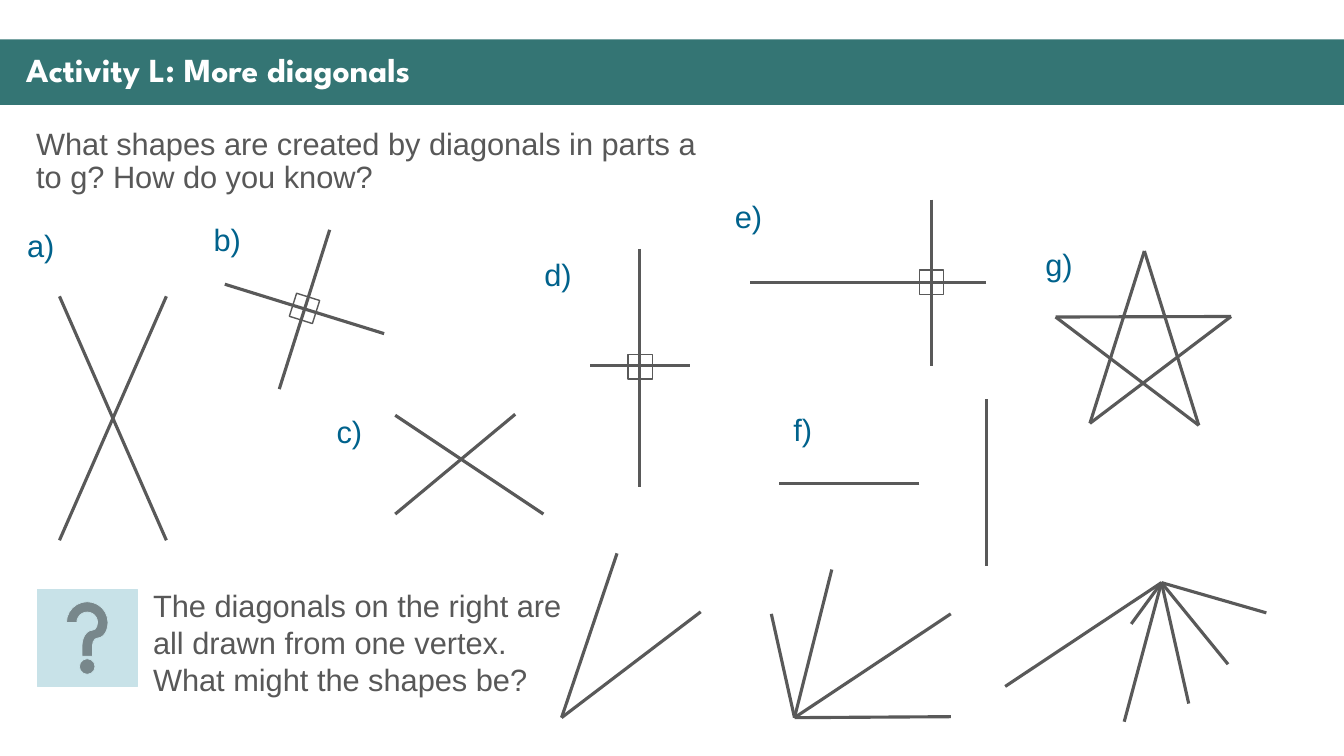
from itertools import pairwise

from lxml.etree import SubElement
from pptx import Presentation
from pptx.dml.color import RGBColor
from pptx.enum.shapes import MSO_CONNECTOR, MSO_SHAPE
from pptx.enum.text import MSO_ANCHOR, MSO_AUTO_SIZE
from pptx.oxml.ns import qn
from pptx.util import Inches, Pt

COLUMNS, ROWS = 133.3, 75
CELL = Inches(0.1)
COLORS = {
    "banner": "347574",
    "title": "FFFFFF",
    "body": "585858",
    "label": "00628C",
    "stroke": "595959",
    "help": "C8E2E8",
}
LABELS = {
    "a)": (1.7, 22),
    "b)": (20.2, 21.4),
    "c)": (32.4, 40.5),
    "d)": (53, 24.9),
    "e)": (71.9, 19.1),
    "f)": (77.7, 40.3),
    "g)": (102.7, 23.9),
}
DIAGONALS = [
    ((5.9, 53.6), (16.5, 29.4)),
    ((16.5, 53.6), (5.9, 29.4)),
    ((38.1, 33.1), (22.3, 28.2)),
    ((32.7, 22.8), (27.7, 38.6)),
    ((39.2, 41.2), (53.9, 51)),
    ((39.2, 51), (51.1, 41.1)),
    ((68.4, 36.3), (58.5, 36.3)),
    ((63.4, 24.7), (63.4, 48.3)),
    ((97.8, 28), (74.4, 28)),
    ((92.4, 19.8), (92.4, 36.3)),
    ((91.2, 48), (77.3, 48)),
    ((97.8, 39.6), (97.8, 56.2)),
]
RIGHT_ANGLES = [((30.2, 30.6), 17.5), ((63.5, 36.4), 0), ((92.4, 28), 0)]
STAR = [(113.5, 24.9), (118.9, 42.2), (104.7, 31.45), (122.1, 31.4), (108.1, 42)]
FANS = [
    ((55.7, 71.2), [(69.5, 60.7), (61.2, 54.9)]),
    ((78.8, 71.2), [(94.3, 60.9), (82.5, 56.5), (76.5, 60.9), (94.3, 71.1)]),
    (
        (115.2, 57.8),
        [(99.7, 68.1), (111.5, 71.6), (117.9, 69.8), (121.8, 65.9),
         (125.6, 60.8), (112.2, 61.9)],
    ),
]


def color(name):
    return RGBColor.from_string(COLORS[name])


def cells(*counts):
    return [round(count * CELL) for count in counts]


def add_block(page, preset, frame, fill=None, line=None, width=1, turn=0):
    block = page.shapes.add_shape(preset, *cells(*frame))
    block.shadow.inherit = False
    block.rotation = turn
    if fill:
        block.fill.solid()
        block.fill.fore_color.rgb = color(fill)
    else:
        block.fill.background()
    if line:
        block.line.color.rgb = color(line)
        block.line.width = Pt(width)
    else:
        block.line.fill.background()


def add_text(page, frame, words, name, size=22, font="Arial", bold=False,
             before=4.4, spacing=1, wrap=True, anchor=MSO_ANCHOR.TOP):
    box = page.shapes.add_textbox(*cells(*frame))
    body = box.text_frame
    body.word_wrap = wrap
    body.vertical_anchor = anchor
    body.auto_size = MSO_AUTO_SIZE.NONE if wrap else MSO_AUTO_SIZE.SHAPE_TO_FIT_TEXT
    para = body.paragraphs[0]
    para.space_before = Pt(before)
    para.line_spacing = spacing
    span = para.add_run()
    span.text = words
    span.font.name = font
    span.font.size = Pt(size)
    span.font.bold = bold
    span.font.color.rgb = color(name)


def add_segment(page, start, end):
    segment = page.shapes.add_connector(MSO_CONNECTOR.STRAIGHT, *cells(*start, *end))
    segment.line.color.rgb = color("stroke")
    segment.line.width = Pt(2.25)
    SubElement(segment._element.spPr, qn("a:effectLst"))


def add_right_angle(page, center, turn, side=2.4):
    left, top = (place - side / 2 for place in center)
    add_block(page, MSO_SHAPE.RECTANGLE, (left, top, side, side),
              line="stroke", turn=turn)


def add_fan(page, vertex, ends):
    for end in ends:
        add_segment(page, vertex, end)


def main():
    deck = Presentation()
    deck.slide_width, deck.slide_height = cells(COLUMNS, ROWS)
    page = deck.slides.add_slide(deck.slide_layouts[6])

    add_block(page, MSO_SHAPE.RECTANGLE, (0, 3.9, COLUMNS, 6.5), fill="banner")
    add_text(page, (1.6, 4.8, 130.4, 4.7), "Activity L: More diagonals", "title",
             size=24, font="League Spartan", bold=True, before=10, spacing=0.9,
             anchor=MSO_ANCHOR.MIDDLE)
    add_text(page, (2.6, 12.3, 68.5, 48.8),
             "What shapes are created by diagonals in parts a to g? How do you know?",
             "body", before=10, spacing=0.9)
    add_block(page, MSO_SHAPE.ACTION_BUTTON_HELP, (3.7, 58.5, 9.9, 9.6),
              fill="help", line="help", width=0.5)
    add_text(page, (14.2, 57.7, 44.3, 12.1),
             "The diagonals on the right are all drawn from one vertex. "
             "What might the shapes be?", "body")

    for start, end in DIAGONALS + list(pairwise(STAR + STAR[:1])):
        add_segment(page, start, end)
    for vertex, ends in FANS:
        add_fan(page, vertex, ends)
    for center, turn in RIGHT_ANGLES:
        add_right_angle(page, center, turn)
    for words, corner in LABELS.items():
        add_text(page, (*corner, 4.8, 4.7), words, "label", wrap=False)

    deck.save("out.pptx")


if __name__ == "__main__":
    main()
